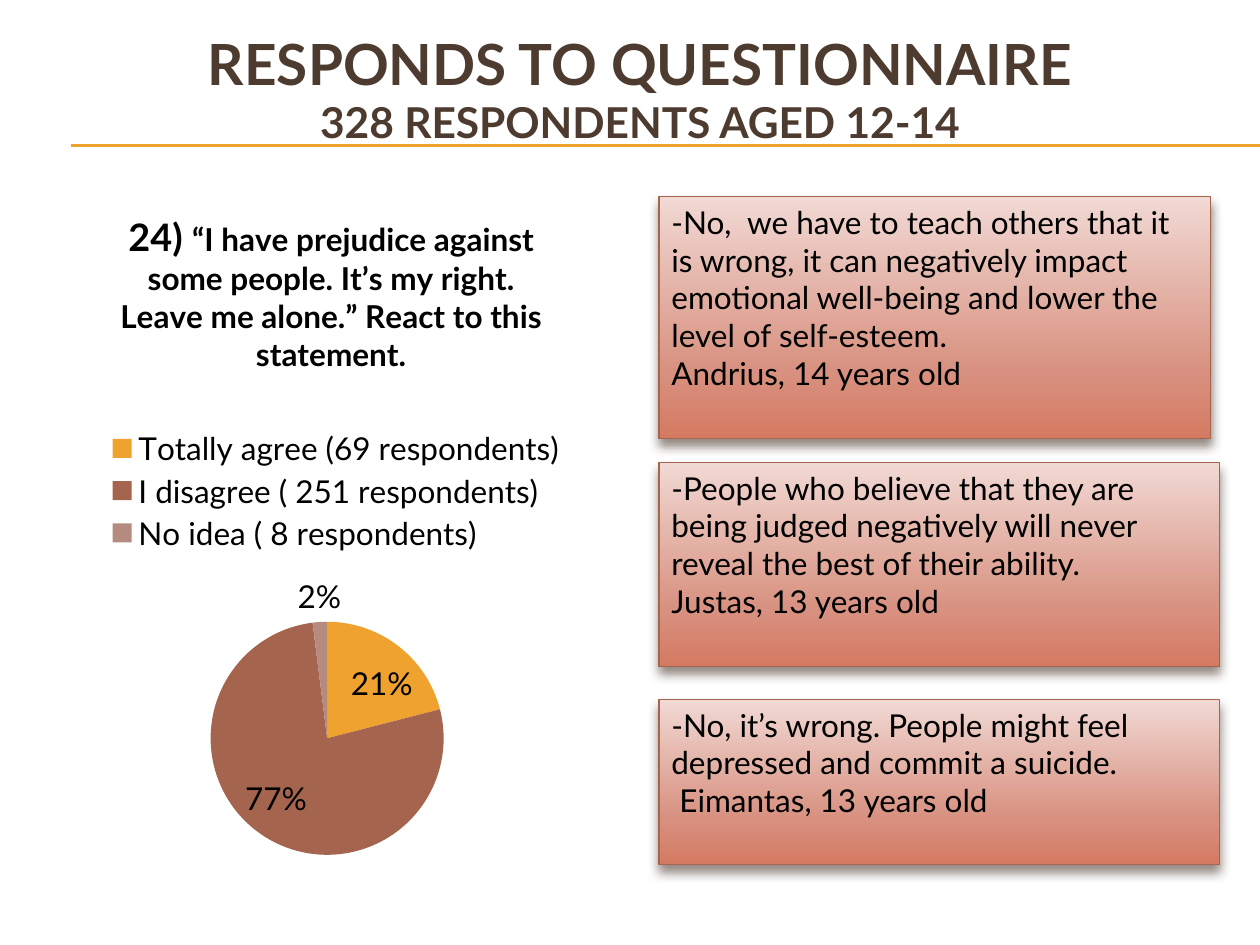
from lxml import etree
from pptx import Presentation, util as u
from pptx.chart.data import CategoryChartData
from pptx.dml.color import RGBColor
from pptx.enum import chart as ch, shapes, text
from pptx.oxml.ns import qn

COLORS = {"brown": "4E3B30", "black": "000000", "gold": "F0A22E", "rust": "A5644E",
          "mauve": "B58B80", "pale": "F1D9D4", "rose": "D89180", "brick": "D47A62"}
RGB = {name: RGBColor.from_string(value) for name, value in COLORS.items()}
FONT = "Lato"

deck = Presentation()
deck.slide_width, deck.slide_height = u.Inches(10), u.Inches(7.5)
slide = deck.slides.add_slide(deck.slide_layouts[6])
COL, ROW = deck.slide_width / 100, deck.slide_height / 75


def area(left, top, width, height):
    return int(left * COL), int(top * ROW), int(width * COL), int(height * ROW)


def place(part, index, **shares):
    for old in part.findall(qn("c:layout")):
        part.remove(old)
    layout = etree.Element(qn("c:layout"))
    manual = etree.SubElement(layout, qn("c:manualLayout"))
    if part.tag == qn("c:plotArea"):
        etree.SubElement(manual, qn("c:layoutTarget")).set("val", "inner")
    for mode in ("xMode", "yMode"):
        etree.SubElement(manual, qn("c:" + mode)).set("val", "edge")
    for side, share in shares.items():
        etree.SubElement(manual, qn("c:" + side)).set("val", str(share))
    part.insert(index, layout)


for rule_row in (11.5, 11.6):
    start_x, rule_y, length, _ = area(5.6, rule_row, 94.4, 0)
    rule = slide.shapes.add_connector(shapes.MSO_CONNECTOR.STRAIGHT,
                                      start_x, rule_y, start_x + length, rule_y)
    rule.line.color.rgb = RGB["gold"]
    rule.line.width = u.Pt(0.75)
    etree.SubElement(rule._element.spPr, qn("a:effectLst"))

heading = slide.shapes.add_textbox(*area(3.3, 5, 95, 9.2)).text_frame
heading.word_wrap = True
heading.vertical_anchor = text.MSO_ANCHOR.BOTTOM
heading.margin_top, heading.margin_bottom = 0, u.Inches(0.25)
headline = heading.paragraphs[0]
headline.alignment = text.PP_ALIGN.CENTER
headline.font.name, headline.font.bold = FONT, True
headline.font.color.rgb = RGB["brown"]
main_line = headline.add_run()
main_line.text, main_line.font.size = "RESPONDS TO QUESTIONNAIRE", u.Pt(32.4)
headline.add_line_break()
sub_line = headline.add_run()
sub_line.text, sub_line.font.size = "328 RESPONDENTS AGED 12-14", u.Pt(24.3)

answers = CategoryChartData()
answers.categories = ["Totally agree (69 respondents)", "I disagree ( 251 respondents)",
                      "No idea ( 8 respondents)"]
answers.add_series("Series 1", (21, 77, 2))
pie = slide.shapes.add_chart(ch.XL_CHART_TYPE.PIE, *area(3.3, 14.1, 45.8, 57.8), answers).chart
pie.font.name, pie.font.size = FONT, u.Pt(18)
pie.font.color.rgb = RGB["black"]

question = pie.chart_title.text_frame.paragraphs[0]
question.font.name, question.font.bold = FONT, True
question.font.color.rgb = RGB["black"]
for words, size in (("24) ", 21.6),
                    ("“I have prejudice against some people. It’s my right. "
                     "Leave me alone.” React to this statement.", 18)):
    part = question.add_run()
    part.text, part.font.size = words, u.Pt(size)
    part.font.name, part.font.bold = FONT, True
    part.font.color.rgb = RGB["black"]
pie.chart_title.include_in_layout = False
place(pie.chart_title._element, 1, x=0.13, y=0.04)

pie.has_legend = True
pie.legend.position = ch.XL_LEGEND_POSITION.TOP
pie.legend.include_in_layout = False
place(pie.legend._element, 1, x=0.11, y=0.34, w=0.8, h=0.18)

plot = pie.plots[0]
plot.vary_by_categories = True
place(pie._chartSpace.chart.plotArea, 0, x=0.29, y=0.61, w=0.41, h=0.32)
for index, color in enumerate(("gold", "rust", "mauve")):
    wedge = plot.series[0].points[index].format
    wedge.fill.solid()
    wedge.fill.fore_color.rgb = RGB[color]
    wedge.line.fill.background()
plot.has_data_labels = True
labels = plot.data_labels
labels.show_percentage, labels.show_value = True, False
labels.number_format, labels.number_format_is_linked = "0%", False
labels.position = ch.XL_LABEL_POSITION.BEST_FIT
labels.font.name, labels.font.size = FONT, u.Pt(18)
labels.font.color.rgb = RGB["black"]

quotes = [
    (15.6, 43.8, 19.2, "-No,  we have to teach others that it is wrong, it can negatively impact "
     "emotional well-being and lower the level of self-esteem.", "Andrius, 14 years old"),
    (36.7, 44.5, 16.2, "-People who believe that they are being judged negatively will never "
     "reveal the best of their ability.", "Justas, 13 years old"),
    (55.5, 44.5, 13.1, "-No, it’s wrong. People might feel depressed and commit a suicide.",
     " Eimantas, 13 years old"),
]
for top, width, height, opinion, author in quotes:
    card = slide.shapes.add_shape(shapes.MSO_SHAPE.RECTANGLE, *area(52.3, top, width, height))
    card.fill.gradient()
    card.fill.gradient_angle = 270
    stops = card._element.spPr.find(".//" + qn("a:gsLst"))
    for stop in list(stops):
        stops.remove(stop)
    for percent, color in ((0, "pale"), (72, "rose"), (100, "brick")):
        stop = etree.SubElement(stops, qn("a:gs"), pos=str(percent * 1000))
        etree.SubElement(stop, qn("a:srgbClr"), val=COLORS[color])
    card.line.color.rgb = RGB["rust"]
    card.line.width = u.Pt(0.79)
    card.shadow.inherit = False
    shadow = etree.SubElement(card._element.spPr.find(qn("a:effectLst")), qn("a:outerShdw"),
                              blurRad=str(u.Pt(6)), dist=str(u.Pt(4)), dir="5400000",
                              rotWithShape="0")
    tint = etree.SubElement(shadow, qn("a:srgbClr"), val=COLORS["brown"])
    etree.SubElement(tint, qn("a:alpha"), val="60000")

    frame = card.text_frame
    frame.word_wrap = True
    frame.vertical_anchor = text.MSO_ANCHOR.TOP
    frame.text = opinion
    frame.add_paragraph().text = author
    for paragraph in frame.paragraphs:
        paragraph.alignment = text.PP_ALIGN.LEFT
        paragraph.font.name, paragraph.font.size = FONT, u.Pt(18)
        paragraph.font.color.rgb = RGB["black"]

deck.save("out.pptx")
